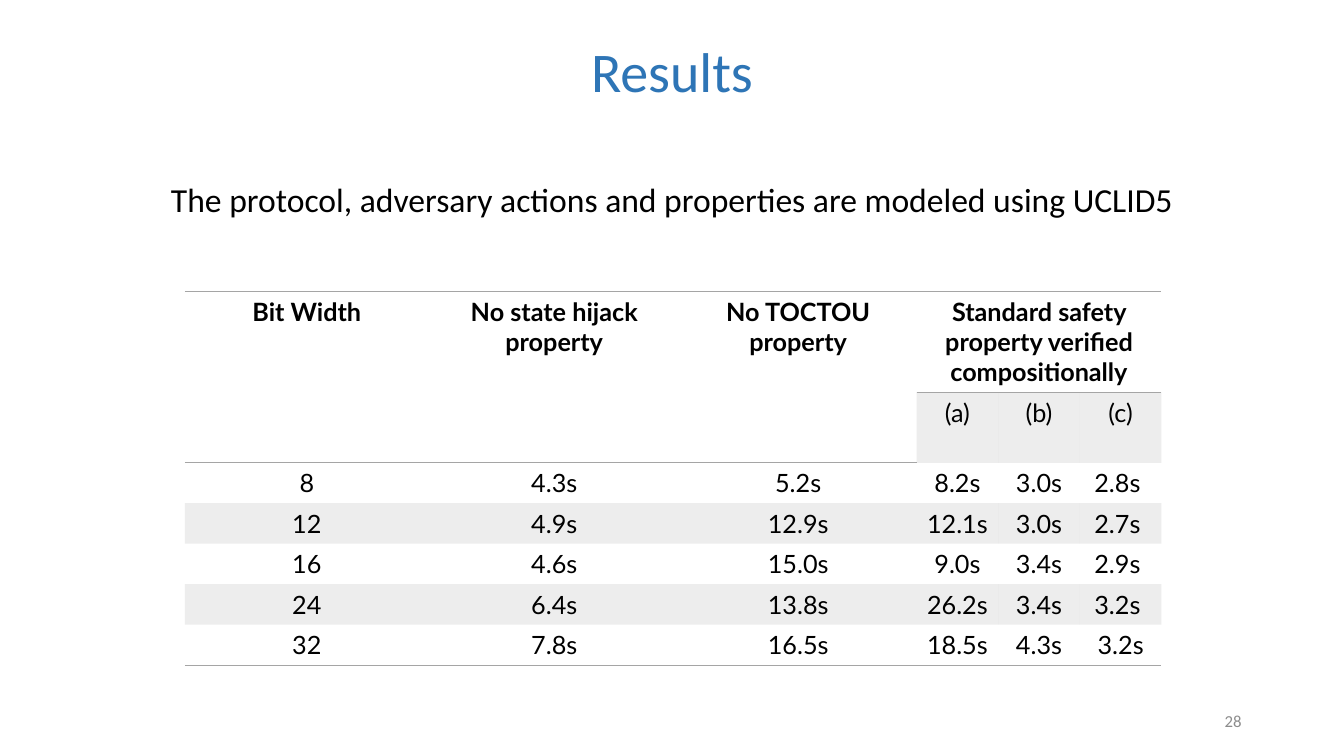
import pptx
import pptx.util
import pptx.dml.color
import pptx.enum.text
import pptx.oxml
import pptx.oxml.ns
import lxml.etree

WIDTH, HEIGHT = pptx.util.Inches(13.33), pptx.util.Inches(7.5)
COLUMN, ROW = WIDTH / 160, HEIGHT / 90
ALIGN = pptx.enum.text.PP_ALIGN
MIDDLE = pptx.enum.text.MSO_ANCHOR.MIDDLE
BLACK, BLUE, RULE, PAGE_GREY = "000000", "2E75B6", "A5A5A5", "8C8C8C"
PLAIN_TABLE = "{2D5ABB26-0587-4C30-8999-92F81FD0307C}"

TIMING_COLUMNS = [29.04, 29.88, 28.2, 9.72, 9.72, 9.72]
TIMING_ROWS = [11.95, 8.4] + [4.82] * 5
HEADINGS = ["Bit Width", "No state hijack property", "No TOCTOU property",
            "Standard safety property verified compositionally"]
TIMINGS = [
    ["8", "4.3s", "5.2s", "8.2s", "3.0s", "2.8s "],
    ["12", "4.9s", "12.9s", "12.1s", "3.0s", "2.7s "],
    ["16", "4.6s", "15.0s", "9.0s", "3.4s", "2.9s "],
    ["24", "6.4s", "13.8s", "26.2s", "3.4s", "3.2s "],
    ["32", "7.8s", "16.5s", "18.5s", "4.3s", "3.2s"],
]


def grid(left, top, width, height):
    return [round(left * COLUMN), round(top * ROW),
            round(width * COLUMN), round(height * ROW)]


def color(value):
    return pptx.dml.color.RGBColor.from_string(value)


def write(frame, text, size=18, font="Calibri", ink=BLACK, bold=False,
          align=ALIGN.CENTER, spacing=None, before=0):
    paragraph = frame.paragraphs[0]
    paragraph.alignment = align
    paragraph.line_spacing = spacing
    paragraph.space_before = pptx.util.Pt(before)
    run = paragraph.add_run()
    run.text = text
    run.font.size = pptx.util.Pt(size)
    run.font.name = font
    run.font.bold = bold
    run.font.color.rgb = color(ink)
    return paragraph


def place(region, box):
    region.left, region.top, region.width, region.height = box
    frame = region.text_frame
    frame.word_wrap = True
    frame.auto_size = pptx.enum.text.MSO_AUTO_SIZE.NONE
    frame.vertical_anchor = MIDDLE
    return frame


def heading(slide, box):
    write(place(slide.shapes.title, box), "Results",
          size=40, ink=BLUE, spacing=0.9)


def statement(slide, box):
    paragraph = write(
        place(slide.placeholders[1], box),
        "The protocol, adversary actions and properties are modeled using UCLID5",
        size=24, spacing=0.9, before=10)
    properties = paragraph._p.get_or_add_pPr()
    properties.set("marL", "0")
    properties.set("indent", "0")
    lxml.etree.SubElement(properties, pptx.oxml.ns.qn("a:buNone"))


def rule_cell(cell, sides):
    for side in sides:
        cell._tc.get_or_add_tcPr().append(pptx.oxml.parse_xml(
            f'<a:ln{side} {pptx.oxml.ns.nsdecls("a")} w="12700"><a:solidFill>'
            f'<a:srgbClr val="{RULE}"/></a:solidFill></a:ln{side}>'))


def shade_cell(cell, shaded):
    if not shaded:
        cell.fill.background()
        return
    cell.fill.solid()
    cell.fill.fore_color.rgb = color(RULE)
    tint = cell._tc.tcPr.find(".//" + pptx.oxml.ns.qn("a:srgbClr"))
    lxml.etree.SubElement(tint, pptx.oxml.ns.qn("a:alpha"), val="20000")


def cell_rules(row, column):
    if row == 0:
        return "TB"
    if row == len(TIMING_ROWS) - 1 or (row == 1 and column < 3):
        return "B"
    return ""


def timings(slide, box):
    frame = slide.shapes.add_table(
        len(TIMING_ROWS), len(TIMING_COLUMNS), *box)
    table = frame.table
    table.first_row = table.horz_banding = False
    table._tbl.tblPr.find(pptx.oxml.ns.qn("a:tableStyleId")).text = PLAIN_TABLE
    for column, share in zip(table.columns, TIMING_COLUMNS):
        column.width = round(share * COLUMN)
    for row, share in zip(table.rows, TIMING_ROWS):
        row.height = round(share * ROW)

    for column in range(3):
        table.cell(0, column).merge(table.cell(1, column))
    table.cell(0, 3).merge(table.cell(0, 5))

    entries = [HEADINGS + [""] * 2, [""] * 3 + ["(a)", "(b)", "(c)"]] + TIMINGS
    for r, line in enumerate(entries):
        for c, text in enumerate(line):
            cell = table.cell(r, c)
            rule_cell(cell, cell_rules(r, c))
            shade_cell(cell, r in (3, 5) or (r == 1 and c >= 3))
            if text:
                write(cell.text_frame, text, font="Lato", bold=r == 0)


def page_number(slide, box):
    write(place(slide.shapes.add_textbox(*box), box), "28",
          size=12, ink=PAGE_GREY, align=ALIGN.RIGHT)


def main():
    deck = pptx.Presentation()
    deck.slide_width, deck.slide_height = WIDTH, HEIGHT
    slide = deck.slides.add_slide(deck.slide_layouts[1])
    heading(slide, grid(11, 3.84, 138, 10.08))
    statement(slide, grid(11, 18.12, 138, 11.76))
    timings(slide, grid(22, 34.68, sum(TIMING_COLUMNS), sum(TIMING_ROWS)))
    page_number(slide, grid(113, 83.4, 36, 4.8))
    deck.save("out.pptx")


if __name__ == "__main__":
    main()
